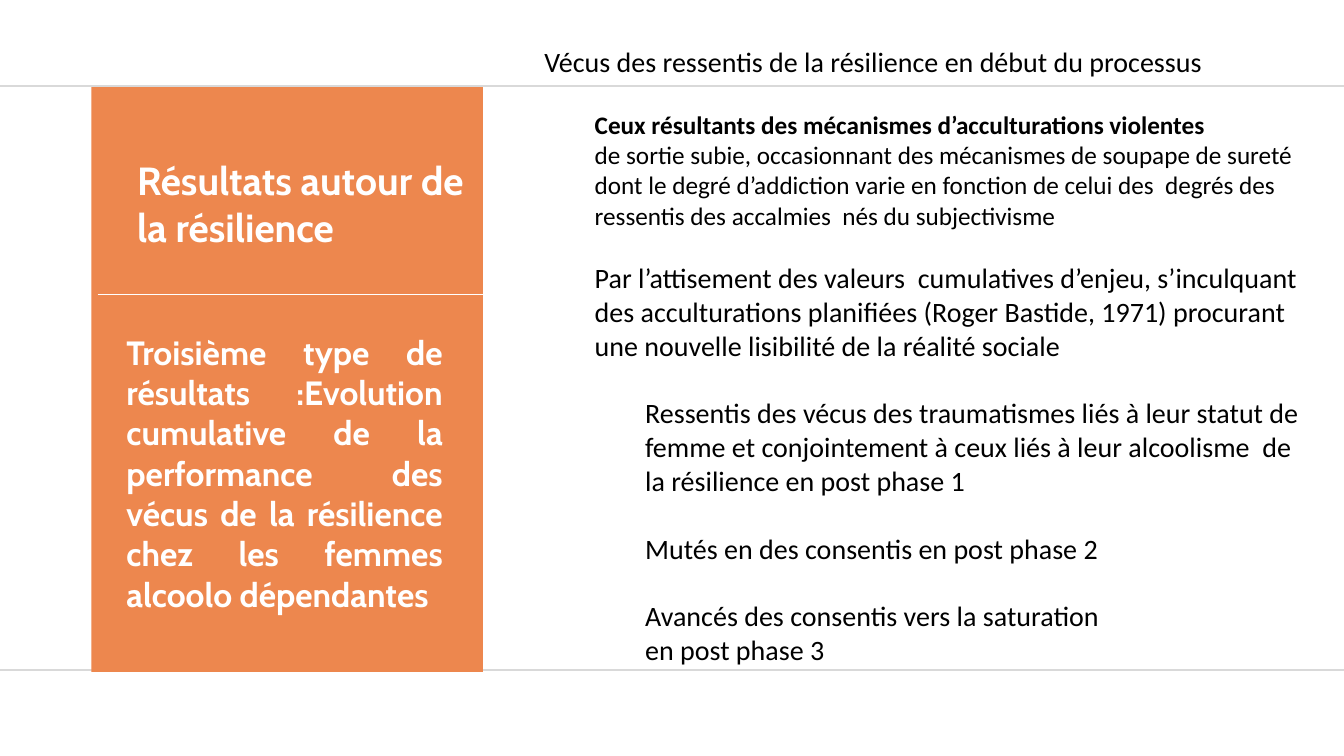
"""Build the slide on resilience results: an orange panel beside the body text."""
from lxml import etree
from pptx import Presentation
from pptx.dml.color import RGBColor
from pptx.enum.shapes import MSO_CONNECTOR, MSO_SHAPE
from pptx.enum.text import MSO_ANCHOR, MSO_AUTO_SIZE, PP_ALIGN
from pptx.oxml.ns import qn
from pptx.util import Pt

STRAIGHT = MSO_CONNECTOR.STRAIGHT
RECTANGLE = MSO_SHAPE.RECTANGLE
TOP = MSO_ANCHOR.TOP
FIT_SHAPE = MSO_AUTO_SIZE.SHAPE_TO_FIT_TEXT
LEFT, JUSTIFY = PP_ALIGN.LEFT, PP_ALIGN.JUSTIFY

PX = 9525
COLOURS = {"panel": "ED874E", "rule": "D9D9D9", "light": "FFFFFF", "dark": "000000"}


def colour(name):
    return RGBColor.from_string(COLOURS[name])


def write(box, bounds, family, ink, paragraphs):
    for side, length in zip(("left", "top", "width", "height"), bounds):
        setattr(box, side, length * PX)
    frame = box.text_frame
    frame_format = {"word_wrap": True, "auto_size": FIT_SHAPE, "vertical_anchor": TOP}
    for key, value in frame_format.items():
        setattr(frame, key, value)
    for index, (text, size, bold, level, align, gap) in enumerate(paragraphs):
        paragraph = frame.add_paragraph() if index else frame.paragraphs[0]
        paragraph_format = {"level": level, "alignment": align, "space_before": Pt(gap)}
        for key, value in paragraph_format.items():
            setattr(paragraph, key, value)
        run = paragraph.add_run()
        run.text = text
        for key, value in {"name": family, "size": Pt(size), "bold": bold}.items():
            setattr(run.font, key, value)
        run.font.color.rgb = colour(ink)


deck = Presentation()
deck.slide_width, deck.slide_height = 1280 * PX, 720 * PX
slide = deck.slides.add_slide(deck.slide_layouts[5])
shapes = slide.shapes

panel = shapes.add_shape(RECTANGLE, 87 * PX, 83 * PX, 373 * PX, 557 * PX)
panel.shadow.inherit = False
panel.fill.solid()
panel.fill.fore_color.rgb = colour("panel")
panel.line.fill.background()

rules = [(0, 1280, 82, "rule", 1.5), (0, 1280, 638, "rule", 1.5), (93, 467, 280, "light", 0.5)]
for start, end, y, ink, weight in rules:
    rule = shapes.add_connector(STRAIGHT, start * PX, y * PX, end * PX, y * PX)
    rule.line.color.rgb = colour(ink)
    rule.line.width = Pt(weight)
    etree.SubElement(rule.element.spPr, qn("a:effectLst"))
    if ink == "rule":
        panel.element.addprevious(rule.element)

title = shapes.title
rule.element.addnext(title.element)
write(title, (121, 144, 340, 100), "Cabin", "light", [
    ("Résultats autour de la résilience", 28, True, 0, LEFT, 0),
])

subtitle = shapes.add_textbox(0, 0, PX, PX)
write(subtitle, (111, 311, 320, 320), "Cabin", "light", [
    ("Troisième type de résultats :Evolution cumulative de la performance des vécus "
     "de la résilience chez les femmes alcoolo dépendantes", 24, True, 0, JUSTIFY, 0),
])

findings = shapes.add_textbox(0, 0, PX, PX)
write(findings, (509, 38, 747, 636), "Calibri", "dark", [
    ("Vécus des ressentis de la résilience en début du processus", 20, False, 0, LEFT, 0),
    ("Ceux résultants des mécanismes d’acculturations violentes", 18, True, 1, LEFT, 22),
    ("de sortie subie, occasionnant des mécanismes de soupape de sureté dont le degré "
     "d’addiction varie en fonction de celui des  degrés des ressentis des accalmies  "
     "nés du subjectivisme", 18, False, 1, LEFT, 0),
    ("Par l’attisement des valeurs  cumulatives d’enjeu, s’inculquant des acculturations "
     "planifiées (Roger Bastide, 1971) procurant une nouvelle lisibilité de la réalité "
     "sociale", 20, False, 1, LEFT, 22),
    ("Ressentis des vécus des traumatismes liés à leur statut de femme et conjointement "
     "à ceux liés à leur alcoolisme  de la résilience en post phase 1",
     20, False, 2, LEFT, 24.4),
    ("Mutés en des consentis en post phase 2", 20, False, 2, LEFT, 24.4),
    ("Avancés des consentis vers la saturation", 20, False, 2, LEFT, 24.4),
    ("en post phase 3", 20, False, 2, LEFT, 0),
])

deck.save("out.pptx")
